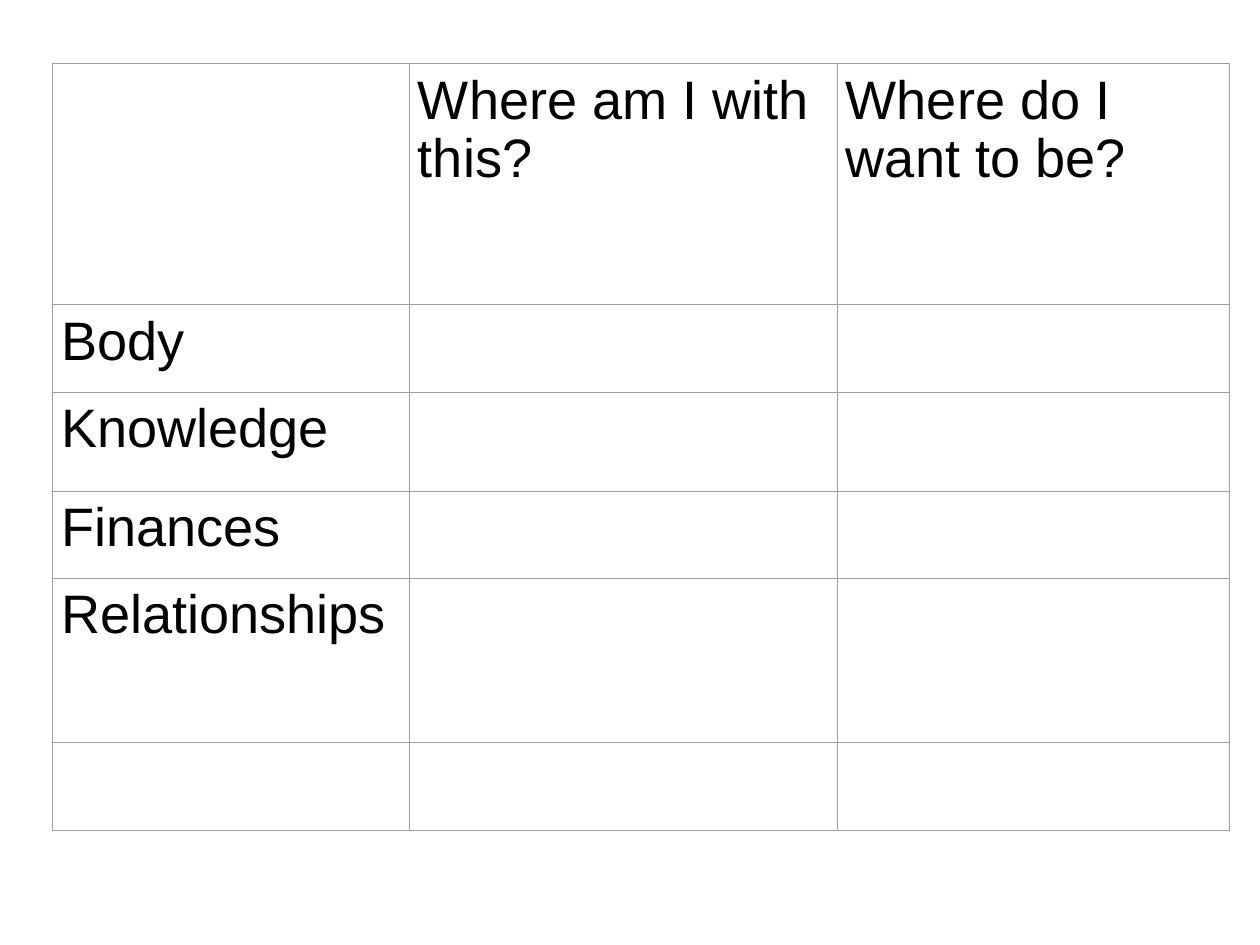
import pptx
import pptx.dml.color
import pptx.oxml
import pptx.oxml.ns
import pptx.util

Pt = pptx.util.Pt

COLORS = {"text": "000000", "border": "9E9E9E"}
FONT = "Arial"
FONT_SIZE = 44
MARGIN = 7.2

COL_WIDTHS = [290, 347.75, 319]
ROW_HEIGHTS = [196, 71.25, 80, 71.25, 133.25, 71.25]
HEADERS = ["", "Where am I with this?", "Where do I want to be?"]
AREAS = ["Body", "Knowledge", "Finances", "Relationships", ""]


def set_borders(cell):
    """Draw a thin line on all four sides, ahead of the cell's fill."""
    tc_pr = cell._tc.get_or_add_tcPr()
    for i, side in enumerate(("lnL", "lnR", "lnT", "lnB")):
        tc_pr.insert(i, pptx.oxml.parse_xml(
            f'<a:{side} {pptx.oxml.ns.nsdecls("a")} w="{Pt(0.75)}">'
            f'<a:solidFill><a:srgbClr val="{COLORS["border"]}"/></a:solidFill>'
            f'<a:prstDash val="solid"/></a:{side}>'))


def set_text(cell, text):
    p = cell.text_frame.paragraphs[0]
    p.text = text
    p.line_spacing = 0.96
    for r in p.runs:
        r.font.name = FONT
        r.font.size = Pt(FONT_SIZE)
        r.font.bold = False
        r.font.color.rgb = pptx.dml.color.RGBColor.from_string(COLORS["text"])


def format_cell(cell):
    cell.fill.background()
    cell.margin_left = cell.margin_right = Pt(MARGIN)
    cell.margin_top = cell.margin_bottom = Pt(MARGIN)
    set_borders(cell)


def add_grid(s, rows, left, top):
    frame = s.shapes.add_table(len(rows), len(COL_WIDTHS), Pt(left), Pt(top),
                               Pt(sum(COL_WIDTHS)), Pt(sum(ROW_HEIGHTS)))
    table = frame.table
    table.first_row = table.horz_banding = False
    for col, width in zip(table.columns, COL_WIDTHS):
        col.width = Pt(width)
    for row, height, texts in zip(table.rows, ROW_HEIGHTS, rows):
        row.height = Pt(height)
        for cell, text in zip(row.cells, texts):
            format_cell(cell)
            if text:
                set_text(cell, text)


def main():
    prs = pptx.Presentation()
    prs.slide_width, prs.slide_height = Pt(1024), Pt(768)
    s = prs.slides.add_slide(prs.slide_layouts[6])

    # Self-assessment table: one row for each area of life
    rows = [HEADERS] + [[area, "", ""] for area in AREAS]
    add_grid(s, rows, 42.5, 51.75)

    prs.save("out.pptx")


if __name__ == "__main__":
    main()
